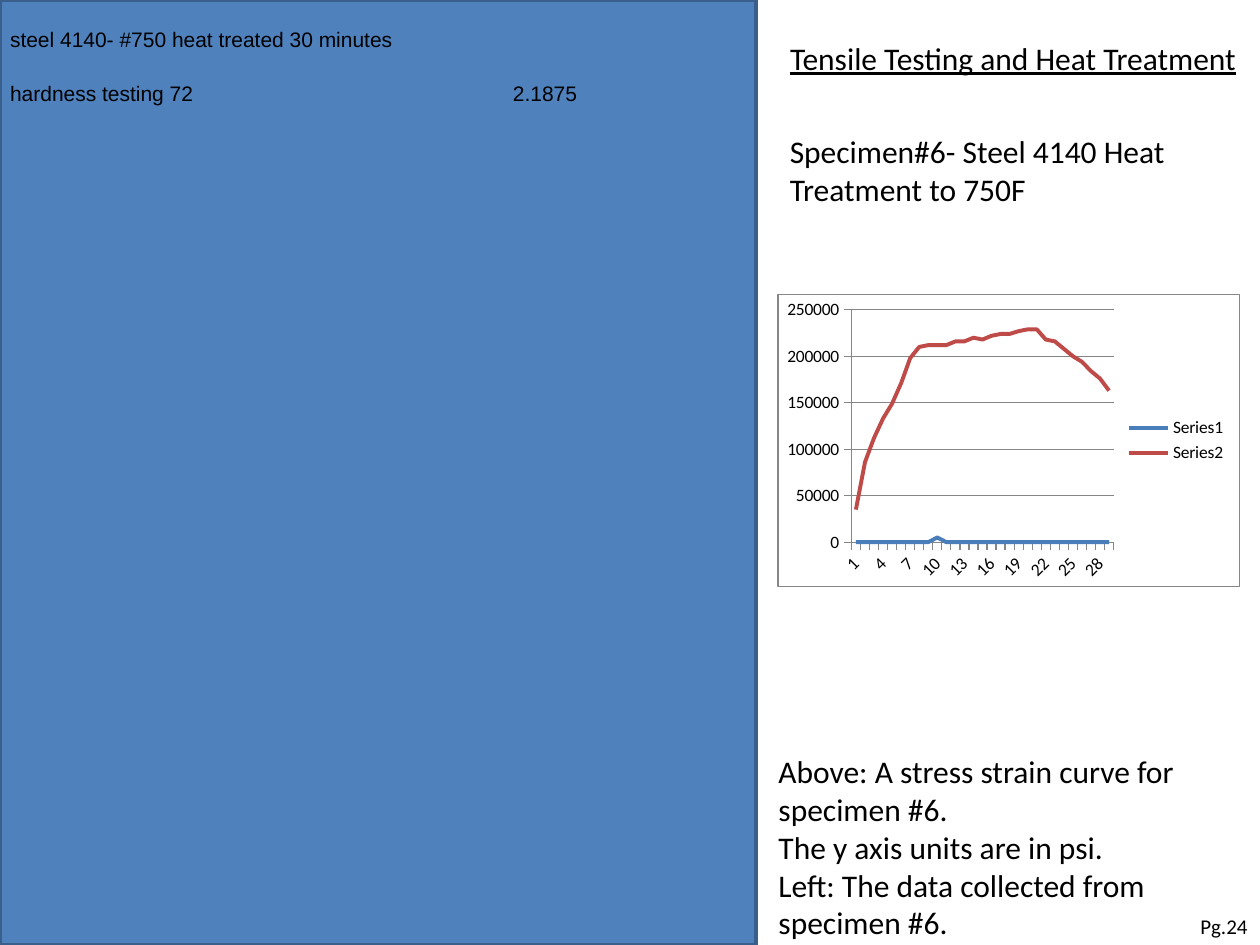
"""Build the tensile testing slide for heat-treated steel 4140."""
from lxml.etree import fromstring
from pptx import Presentation
from pptx.chart.data import CategoryChartData
from pptx.dml.color import RGBColor
from pptx.enum.chart import XL_CHART_TYPE, XL_LEGEND_POSITION, XL_TICK_MARK
from pptx.enum.shapes import MSO_SHAPE
from pptx.enum.text import MSO_ANCHOR, PP_ALIGN
from pptx.oxml.ns import nsdecls, qn
from pptx.util import Inches, Pt

COLORS = {
    "text": "000000", "panel": "4F81BD", "panel_edge": "3A5F8C", "paper": "FFFFFF",
    "rule": "868686", "strain": "4A7EBB", "stress": "BE4B48",
}


def rgb(name):
    return RGBColor.from_string(COLORS[name])


def write(frame, text, size=18, font="Calibri", align=PP_ALIGN.LEFT, underline=None,
          anchor=MSO_ANCHOR.TOP):
    frame.text = text
    frame.word_wrap = True
    frame.vertical_anchor = anchor
    for paragraph in frame.paragraphs:
        paragraph.alignment = align
        for run in paragraph.runs:
            run.font.size = Pt(size)
            run.font.name = font
            run.font.underline = underline
            run.font.color.rgb = rgb("text")


prs = Presentation()
prs.slide_width, prs.slide_height = Inches(10), Inches(7.5)
slide = prs.slides.add_slide(prs.slide_layouts[5])

title = slide.shapes.title
title.left, title.top = Inches(6.17), Inches(0.26)
title.width, title.height = Inches(3.83), Inches(0.4)
write(title.text_frame, "Tensile Testing and Heat Treatment", underline=True)

panel = slide.shapes.add_shape(MSO_SHAPE.RECTANGLE, 0, 0, Inches(6), Inches(7.5))
panel.shadow.inherit = False
panel.fill.solid()
panel.fill.fore_color.rgb = rgb("panel")
panel.line.color.rgb = rgb("panel_edge")
panel.line.width = Pt(2)

stress_psi = [
    35000, 86000, 112000, 133000, 149000, 171000, 198000, 210000, 212000, 212000,
    212000, 216000, 216000, 220000, 218000, 222000, 224000, 224000, 227000, 229000,
    229000, 218000, 216000, 208000, 200000, 194000, 184000, 176000, 163000,
]
readings = range(1, len(stress_psi) + 1)
curve_data = CategoryChartData()
curve_data.categories = [str(reading) for reading in readings]
curve_data.add_series("Series1", [5000 if reading == 10 else 0 for reading in readings])
curve_data.add_series("Series2", stress_psi)
curve = slide.shapes.add_chart(
    XL_CHART_TYPE.LINE, Inches(6.17), Inches(2.33), Inches(3.67), Inches(2.33), curve_data
).chart
curve.has_title = False
curve.font.size = Pt(10)
curve.font.name = "Calibri"
curve.font.color.rgb = rgb("text")
curve.has_legend = True
curve.legend.position = XL_LEGEND_POSITION.RIGHT
curve.legend.include_in_layout = False
curve.plots[0].vary_by_categories = False
for series, color in zip(curve.plots[0].series, ("strain", "stress")):
    series.smooth = False
    series.format.line.color.rgb = rgb(color)
    series.format.line.width = Pt(2.25)

psi_axis, reading_axis = curve.value_axis, curve.category_axis
psi_axis.minimum_scale, psi_axis.maximum_scale, psi_axis.major_unit = 0, 250000, 50000
psi_axis.has_major_gridlines = True
for axis in (psi_axis, reading_axis):
    axis.major_tick_mark = XL_TICK_MARK.OUTSIDE
    axis.tick_labels.font.size = Pt(10)
for rule in (psi_axis.format.line, reading_axis.format.line, psi_axis.major_gridlines.format.line):
    rule.color.rgb = rgb("rule")
    rule.width = Pt(0.75)
reading_axis_xml = reading_axis.tick_labels.font and curve.element.find(".//" + qn("c:catAx"))
reading_axis_xml.find(".//" + qn("a:bodyPr")).set("rot", "-2700000")
reading_axis_xml.find(qn("c:noMultiLvlLbl")).addprevious(
    fromstring(f'<c:tickLblSkip {nsdecls("c")} val="3"/>'))

paper_fill = f'<a:solidFill><a:srgbClr val="{COLORS["paper"]}"/></a:solidFill>'
border = f'<a:ln w="9525"><a:solidFill><a:srgbClr val="{COLORS["rule"]}"/></a:solidFill></a:ln>'
chart_area = curve.element.find(qn("c:chart"))
chart_area.addnext(fromstring(f'<c:spPr {nsdecls("c", "a")}>{paper_fill}{border}</c:spPr>'))
chart_area.find(qn("c:plotArea")).append(
    fromstring(f'<c:spPr {nsdecls("c", "a")}>{paper_fill}</c:spPr>'))

caption = ("Above: A stress strain curve for specimen #6.\nThe y axis units are in psi.\n"
           "Left: The data collected from specimen #6.")
for text, left, top, width, height, style in (
    ("Specimen#6- Steel 4140 Heat Treatment to 750F", 6.17, 1, 3.67, 0.71, {}),
    (caption, 6.08, 5.92, 3.92, 1.62, {}),
    ("Pg.24", 9.08, 7.2, 0.92, 0.3, {"size": 12, "align": PP_ALIGN.RIGHT}),
):
    note = slide.shapes.add_textbox(Inches(left), Inches(top), Inches(width), Inches(height))
    write(note.text_frame, text, **style)

results = slide.shapes.add_table(2, 3, Inches(0.08), 0, Inches(6), Inches(0.83)).table
results.first_row = results.horz_banding = False
results._tbl.tblPr.find(qn("a:tableStyleId")).text = "{2D5ABB26-0587-4C30-8999-92F81FD0307C}"
for column, width in zip(results.columns, (3, 1.5, 1.5)):
    column.width = Inches(width)
for row, height in zip(results.rows, (0.41, 0.43)):
    row.height = Inches(height)
for cell in results.iter_cells():
    cell.fill.background()
    cell.margin_left = cell.margin_right = cell.margin_top = cell.margin_bottom = 0
results.cell(0, 0).merge(results.cell(0, 2))
for row, column, text, align in (
    (0, 0, "steel 4140- #750 heat treated 30 minutes", PP_ALIGN.LEFT),
    (1, 0, "hardness testing 72", PP_ALIGN.LEFT),
    (1, 1, "2.1875", PP_ALIGN.RIGHT),
):
    cell = results.cell(row, column)
    write(cell.text_frame, text, size=12, font="Arial", align=align)
    cell.vertical_anchor = MSO_ANCHOR.BOTTOM

prs.save("out.pptx")
